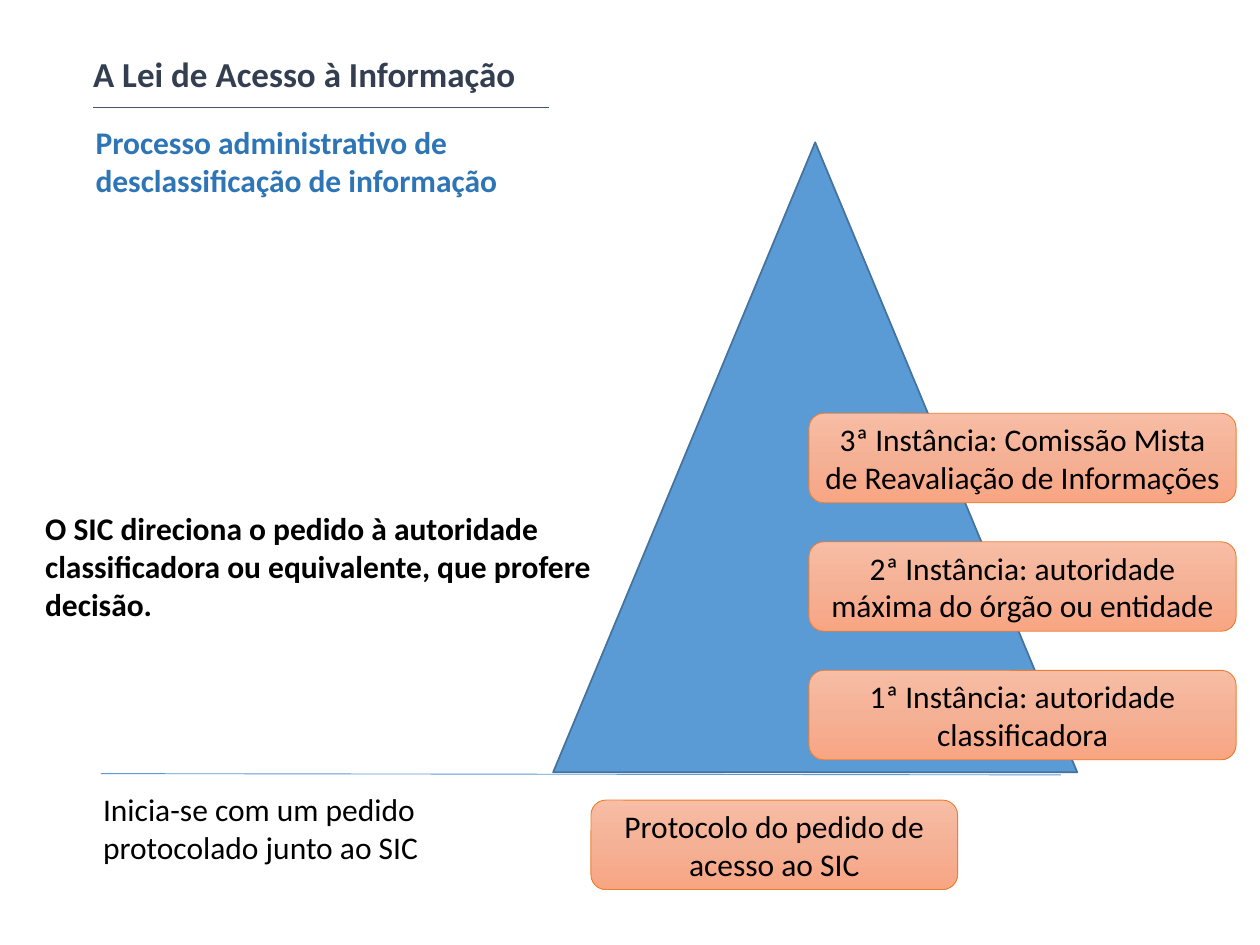
from copy import deepcopy
from pptx import Presentation
from pptx.dml.color import RGBColor
from pptx.enum.shapes import MSO_CONNECTOR as Wire, MSO_SHAPE as Form
from pptx.enum.text import MSO_ANCHOR as Anchor, MSO_AUTO_SIZE as Fit, PP_ALIGN as Align
from pptx.oxml.ns import qn
from pptx.oxml.xmlchemy import OxmlElement
from pptx.util import Inches, Pt

WIDE, HIGH = Inches(10), Inches(7.5)
COLS, ROWS = 100, 75
SHADES = [(0, "F7BDA5"), (0.5, "F5B196"), (1, "F8A582")]
STEPS = [
    "3ª Instância: Comissão Mista de Reavaliação de Informações",
    "2ª Instância: autoridade máxima do órgão ou entidade",
    "1ª Instância: autoridade classificadora",
]


def hue(code):
    return RGBColor.from_string(code)


def col(n):
    return round(WIDE * n / COLS)


def row(n):
    return round(HIGH * n / ROWS)


def place(x, y, w, h):
    return col(x), row(y), col(w), row(h)


def write(frame, lines, size=18, color="000000", bold=False, align=Align.LEFT):
    frame.text = "\n".join(lines)
    for para in frame.paragraphs:
        para.alignment = align
        font = para.font
        font.name, font.size, font.bold = "Calibri", Pt(size), bold
        font.color.rgb = hue(color)


def label(slide, box, lines, wrap=True, **style):
    frame = slide.shapes.add_textbox(*place(*box)).text_frame
    frame.word_wrap = wrap
    frame.auto_size = Fit.SHAPE_TO_FIT_TEXT
    write(frame, lines, **style)


def rule(slide, x1, y1, x2, y2, color):
    line = slide.shapes.add_connector(Wire.STRAIGHT, col(x1), row(y1), col(x2), row(y2))
    line.line.color.rgb = hue(color)
    line.line.width = Pt(0.5)
    line._element.spPr.append(OxmlElement("a:effectLst"))


def solid(slide, form, box, edge, width):
    shape = slide.shapes.add_shape(form, *place(*box))
    shape.shadow.inherit = False
    shape.line.color.rgb = hue(edge)
    shape.line.width = Pt(width)
    return shape


def peak(slide, box):
    shape = solid(slide, Form.ISOSCELES_TRIANGLE, box, "43739E", 1)
    shape.fill.solid()
    shape.fill.fore_color.rgb = hue("5B9BD5")


def shade(shape):
    fill = shape.fill
    fill.gradient()
    fill.gradient_angle = 270
    stops = shape._element.spPr.find(qn("a:gradFill")).find(qn("a:gsLst"))
    stops.append(deepcopy(stops[-1]))
    for stop, (spot, code) in zip(fill.gradient_stops, SHADES):
        stop.position = spot
        stop.color.rgb = hue(code)


def card(slide, box, text):
    shape = solid(slide, Form.ROUNDED_RECTANGLE, box, "ED7D31", 0.5)
    shade(shape)
    frame = shape.text_frame
    frame.word_wrap = True
    frame.vertical_anchor = Anchor.MIDDLE
    frame.margin_left = frame.margin_right = col(0.6)
    write(frame, [text], align=Align.CENTER)


def main():
    deck = Presentation()
    deck.slide_width, deck.slide_height = WIDE, HIGH
    slide = deck.slides.add_slide(deck.slide_layouts[6])

    peak(slide, (43.9, 11.3, 41.6, 50))
    label(slide, (6.4, 3.7, 35.9, 4.4), ["A Lei de Acesso à Informação"],
          wrap=False, size=20, color="333F50", bold=True)
    rule(slide, 7.4, 8.5, 43.6, 8.5, "44546A")
    label(slide, (6.6, 9.3, 34.1, 7.1),
          ["Processo administrativo de", "desclassificação de informação"],
          wrap=False, color="2E75B6", bold=True)
    label(slide, (7.2, 62.2, 31.7, 7.1),
          ["Inicia-se com um pedido protocolado junto ao SIC"])
    rule(slide, 8, 61.4, 84.2, 61.5, "5B9BD5")
    for i, text in enumerate(STEPS):
        card(slide, (64.2, 32.8 + 10.2 * i, 33.9, 7.1), text)
    card(slide, (46.9, 63.5, 29.1, 7.1), "Protocolo do pedido de acesso ao SIC")
    label(slide, (2.6, 39.9, 46.1, 10.1),
          ["O SIC direciona o pedido à autoridade classificadora ou equivalente, "
           "que profere decisão."], bold=True)
    deck.save("out.pptx")


if __name__ == "__main__":
    main()
